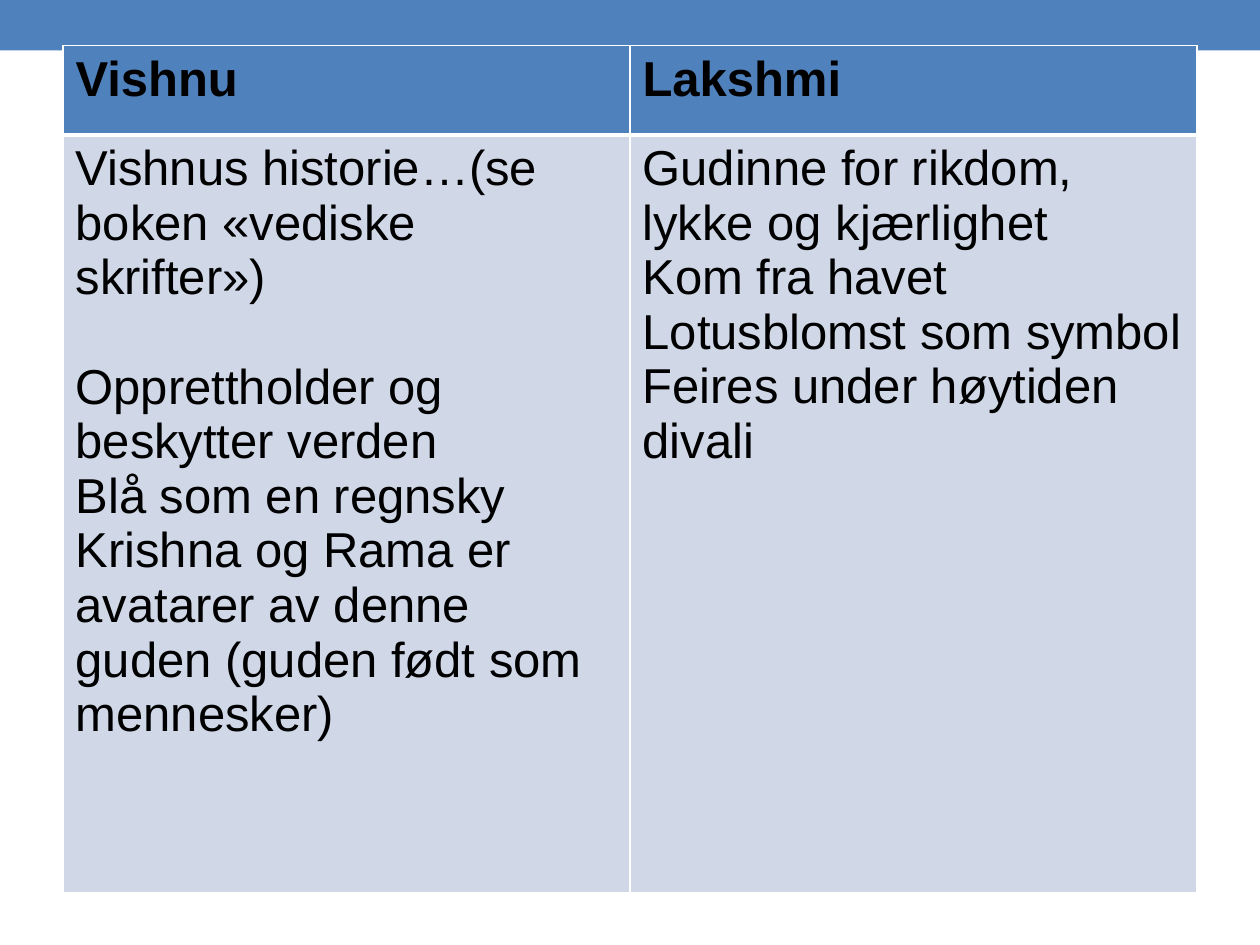
from lxml import etree
from pptx import Presentation
from pptx.dml.color import RGBColor
from pptx.enum.shapes import MSO_SHAPE
from pptx.oxml.ns import qn
from pptx.util import Cm, Pt

RECTANGLE = MSO_SHAPE.RECTANGLE
BLUE, PALE, WHITE, BLACK = "4F81BD", "D0D8E8", "FFFFFF", "000000"


def paint(fill, color):
    fill.solid()
    fill.fore_color.rgb = RGBColor.from_string(color)


def add_borders(cell, widths):
    properties = cell._tc.get_or_add_tcPr()
    for position, (side, width) in enumerate(widths.items()):
        line = etree.Element(qn(f"a:ln{side}"), w=str(Pt(width)))
        solid = etree.SubElement(line, qn("a:solidFill"))
        etree.SubElement(solid, qn("a:srgbClr"), val=WHITE)
        properties.insert(position, line)


prs = Presentation()
prs.slide_width, prs.slide_height = Cm(25.4), Cm(19.05)
slide = prs.slides.add_slide(prs.slide_layouts[6])

# Band along the top
band = slide.shapes.add_shape(RECTANGLE, Cm(0), Cm(0), prs.slide_width, Cm(1.02))
band.shadow.inherit = False
paint(band.fill, BLUE)
band.line.fill.background()

# Each god: heading, then paragraphs with the space before them in points
gods = [
    ("Vishnu", [
        ("Vishnus historie…(se boken «vediske skrifter»)", 0),
        ("Opprettholder og beskytter verden", 31.3),
        ("Blå som en regnsky", 0),
        ("Krishna og Rama er avatarer av denne guden (guden født som mennesker)", 0),
    ]),
    ("Lakshmi", [
        ("Gudinne for rikdom, lykke og kjærlighet", 0),
        ("Kom fra havet", 0),
        ("Lotusblomst som symbol", 0),
        ("Feires under høytiden divali", 0),
    ]),
]

# Table with one column per god
table = slide.shapes.add_table(
    2, len(gods), Cm(1.27), Cm(0.92), Cm(22.86), Cm(17.07)).table
table.rows[0].height, table.rows[1].height = Cm(1.8), Cm(15.27)

for column, (god, facts) in enumerate(gods):
    table.columns[column].width = Cm(11.43)
    for row, paragraphs in enumerate([[(god, 0)], facts]):
        is_heading = row == 0
        cell = table.cell(row, column)
        paint(cell.fill, BLUE if is_heading else PALE)
        top, bottom = (1, 3) if is_heading else (3, 1)
        add_borders(cell, {"L": 1, "R": 1, "T": top, "B": bottom})
        for index, (text, space) in enumerate(paragraphs):
            frame = cell.text_frame
            paragraph = frame.add_paragraph() if index else frame.paragraphs[0]
            paragraph.space_before = Pt(space)
            run = paragraph.add_run()
            run.text = text
            run.font.name = "Arial"
            run.font.size = Pt(28)
            run.font.bold = is_heading
            paint(run.font.fill, BLACK)

prs.save("out.pptx")
